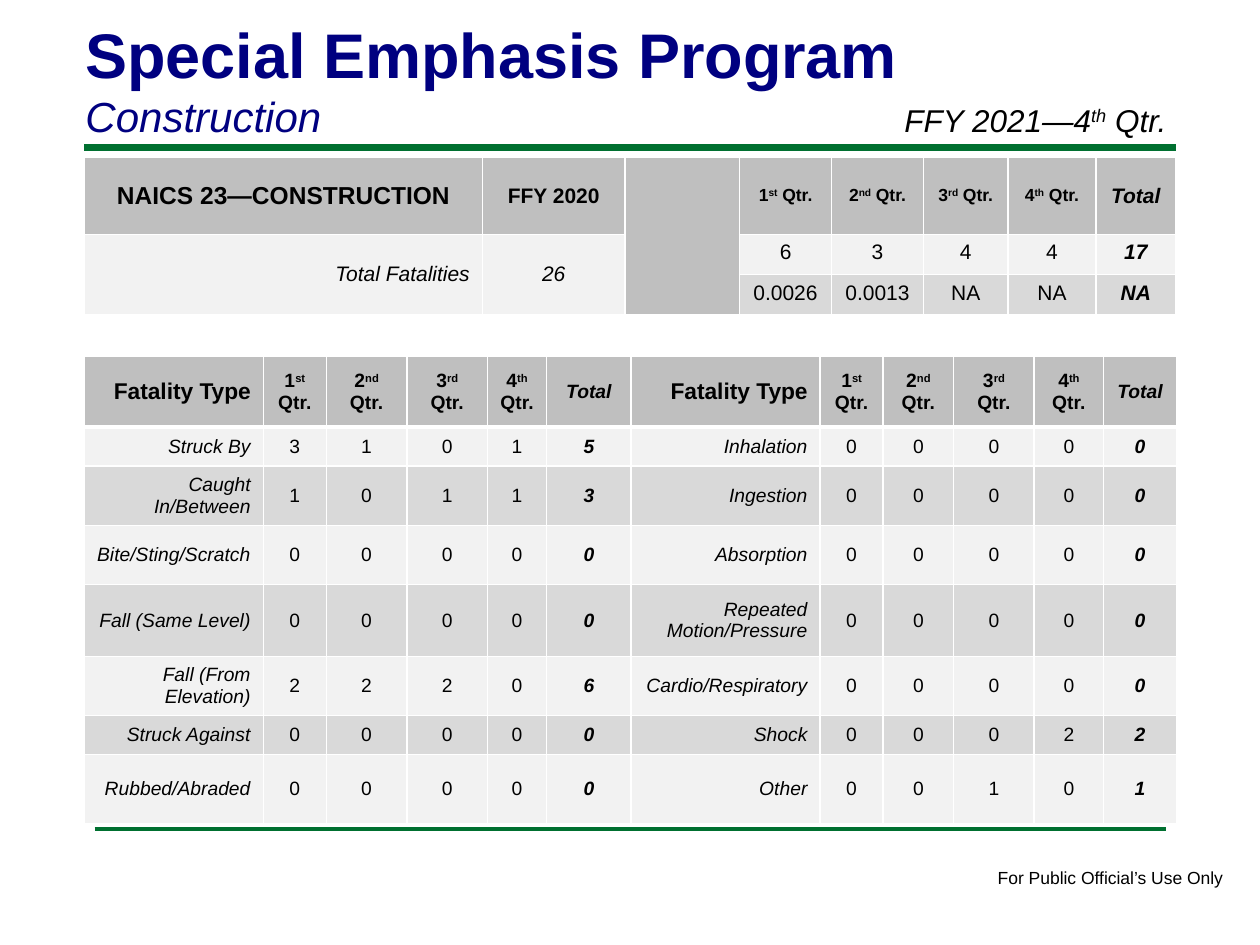
from dataclasses import dataclass, replace

from lxml.etree import SubElement
from pptx import Presentation
from pptx.dml.color import RGBColor
from pptx.enum.shapes import MSO_CONNECTOR
from pptx.enum.text import MSO_ANCHOR, MSO_AUTO_SIZE, PP_ALIGN
from pptx.oxml import parse_xml
from pptx.oxml.ns import nsdecls, qn
from pptx.util import Inches, Pt

BLACK = RGBColor(0x00, 0x00, 0x00)
WHITE = RGBColor(0xFF, 0xFF, 0xFF)
NAVY = RGBColor(0x00, 0x00, 0x80)
GREEN = RGBColor(0x00, 0x70, 0x30)
HEADER_GRAY = RGBColor(0xBF, 0xBF, 0xBF)
LIGHT_GRAY = RGBColor(0xF2, 0xF2, 0xF2)
MID_GRAY = RGBColor(0xD9, 0xD9, 0xD9)

LEFT, CENTER, RIGHT = PP_ALIGN.LEFT, PP_ALIGN.CENTER, PP_ALIGN.RIGHT
TOP, MIDDLE, BOTTOM = MSO_ANCHOR.TOP, MSO_ANCHOR.MIDDLE, MSO_ANCHOR.BOTTOM


@dataclass(frozen=True)
class Style:
    size: float
    bold: bool = False
    italic: bool = False
    color: RGBColor = BLACK
    align: PP_ALIGN = LEFT
    anchor: MSO_ANCHOR = MIDDLE


@dataclass(frozen=True)
class Entry:
    """Text of a table cell; ^ marks turn superscript on and off."""
    text: str
    style: Style


@dataclass(frozen=True)
class Grid:
    top: float
    cols: list[float]
    rows: list[float]
    entries: list[list[Entry]]
    header_rule: float = 1


QUARTERS = ["1^st^ Qtr.", "2^nd^ Qtr.", "3^rd^ Qtr.", "4^th^ Qtr."]
QUARTER = Style(11, bold=True, align=CENTER)
TOTAL = Style(11, bold=True, italic=True, align=CENTER)
HEADING = Style(13, bold=True, align=RIGHT)
LABEL = Style(11, italic=True, align=RIGHT)
NUMBER = Style(11, align=CENTER)
EMPTY = Entry("", NUMBER)

FATALITIES = [
    ("Struck By", [3, 1, 0, 1], "Inhalation", [0, 0, 0, 0]),
    ("Caught In/Between", [1, 0, 1, 1], "Ingestion", [0, 0, 0, 0]),
    ("Bite/Sting/Scratch", [0, 0, 0, 0], "Absorption", [0, 0, 0, 0]),
    ("Fall (Same Level)", [0, 0, 0, 0], "Repeated Motion/Pressure", [0, 0, 0, 0]),
    ("Fall (From Elevation)", [2, 2, 2, 0], "Cardio/Respiratory", [0, 0, 0, 0]),
    ("Struck Against", [0, 0, 0, 0], "Shock", [0, 0, 0, 2]),
    ("Rubbed/Abraded", [0, 0, 0, 0], "Other", [0, 0, 1, 0]),
]


def write(p, text: str, style: Style) -> None:
    p.alignment = style.align
    for i, part in enumerate(text.split("^")):
        if not part:
            continue
        r = p.add_run()
        r.text = part
        font = r.font
        font.name, font.size = "Arial", Pt(style.size)
        font.bold, font.italic = style.bold, style.italic
        font.color.rgb = style.color
        if i % 2:
            r._r.get_or_add_rPr().set("baseline", "30000")
    if not text:
        SubElement(p._p, qn("a:endParaRPr")).set("sz", str(int(style.size * 100)))


def add_text(s, x: float, y: float, w: float, h: float,
             lines: list[Entry], wrap: bool = True) -> None:
    tf = s.shapes.add_textbox(Inches(x), Inches(y), Inches(w), Inches(h)).text_frame
    tf.word_wrap = wrap
    tf.auto_size = MSO_AUTO_SIZE.SHAPE_TO_FIT_TEXT
    tf.vertical_anchor = lines[0].style.anchor
    for i, line in enumerate(lines):
        write(tf.add_paragraph() if i else tf.paragraphs[0], line.text, line.style)


def add_rule(s, x: float, y: float, width: float, weight: float) -> None:
    line = s.shapes.add_connector(MSO_CONNECTOR.STRAIGHT, Inches(x), Inches(y),
                                  Inches(x + width), Inches(y))
    line.line.color.rgb = GREEN
    line.line.width = Pt(weight)
    SubElement(line._element.spPr, qn("a:effectLst"))


def set_borders(cell, top: float, bottom: float) -> None:
    """White cell borders, one point wide at the sides."""
    tc_pr = cell._tc.get_or_add_tcPr()
    for i, (side, weight) in enumerate(zip("LRTB", (1, 1, top, bottom))):
        tc_pr.insert(i, parse_xml(
            f'<a:ln{side} {nsdecls("a")} w="{Pt(weight)}"><a:solidFill>'
            f'<a:srgbClr val="{WHITE}"/></a:solidFill></a:ln{side}>'))


def add_grid(s, grid: Grid):
    table = s.shapes.add_table(
        len(grid.rows), len(grid.cols), Inches(0.67), Inches(grid.top),
        Inches(sum(grid.cols)), Inches(sum(grid.rows))).table
    table.first_row = table.horz_banding = False
    for column, width in zip(table.columns, grid.cols):
        column.width = Inches(width)
    for i, (row, height) in enumerate(zip(table.rows, grid.rows)):
        row.height = Inches(height)
        fill = HEADER_GRAY if i == 0 else LIGHT_GRAY if i % 2 else MID_GRAY
        for cell, entry in zip(row.cells, grid.entries[i]):
            cell.fill.solid()
            cell.fill.fore_color.rgb = fill
            cell.vertical_anchor = entry.style.anchor
            write(cell.text_frame.paragraphs[0], entry.text, entry.style)
            set_borders(cell, grid.header_rule if i == 1 else 1,
                        grid.header_rule if i == 0 else 1)
    return table


def summary_grid() -> Grid:
    quarter = replace(QUARTER, size=10)
    total = replace(TOTAL, size=12)
    value = replace(NUMBER, size=12, anchor=TOP)

    def values(*texts: str) -> list[Entry]:
        return ([Entry(t, value) for t in texts[:-1]]
                + [Entry(texts[-1], replace(total, anchor=TOP))])

    header = [Entry("NAICS 23—CONSTRUCTION", replace(QUARTER, size=14)),
              Entry("FFY 2020", replace(QUARTER, size=12)), EMPTY,
              *[Entry(q, quarter) for q in QUARTERS], Entry("Total", total)]
    counts = [Entry("Total Fatalities", replace(LABEL, size=12)),
              Entry("26", replace(NUMBER, size=12, italic=True)), EMPTY,
              *values("6", "3", "4", "4", "17")]
    rates = [EMPTY] * 3 + values("0.0026", "0.0013", "NA", "NA", "NA")
    return Grid(1.25, [3.16, 1.13, 0.91, 0.73, 0.73, 0.67, 0.7, 0.63],
                [0.61, 0.32, 0.32], [header, counts, rates])


def fatality_grid() -> Grid:
    def half(label: str, counts: list[int]) -> list[Entry]:
        return [Entry(label, LABEL), *[Entry(str(n), NUMBER) for n in counts],
                Entry(str(sum(counts)), TOTAL)]

    header = [Entry("Fatality Type", HEADING), *[Entry(q, QUARTER) for q in QUARTERS],
              Entry("Total", TOTAL)] * 2
    body = [half(a, m) + half(b, n) for a, m, b, n in FATALITIES]
    return Grid(2.83,
                [1.42, 0.5, 0.64, 0.64, 0.47, 0.67, 1.5, 0.5, 0.56, 0.64, 0.55, 0.58],
                [0.56, 0.31, 0.47, 0.47, 0.57, 0.47, 0.31, 0.55],
                [header, *body], header_rule=3)


def main() -> None:
    prs = Presentation()
    prs.slide_width, prs.slide_height = Inches(10), Inches(7.5)
    s = prs.slides.add_slide(prs.slide_layouts[6])

    add_rule(s, 0.67, 1.17, 8.66, 4)
    add_rule(s, 0.75, 6.58, 8.5, 2)
    add_text(s, 7.82, 6.83, 2.01, 0.27,
             [Entry("For Public Official’s Use Only", Style(10, anchor=TOP))], wrap=False)
    add_text(s, 0.58, 0.06, 8.25, 1.11, [
        Entry("Special Emphasis Program", Style(36, bold=True, color=NAVY, anchor=BOTTOM)),
        Entry("Construction", Style(24, italic=True, color=NAVY))])

    summary = add_grid(s, summary_grid())
    summary.cell(0, 2).merge(summary.cell(2, 2))
    for column in (0, 1):
        summary.cell(1, column).merge(summary.cell(2, column))
    add_grid(s, fatality_grid())

    add_text(s, 7.08, 0.75, 2.5, 0.4,
             [Entry("FFY 2021—4^th^ Qtr.", Style(18, italic=True, anchor=TOP))])
    prs.save("out.pptx")


if __name__ == "__main__":
    main()
